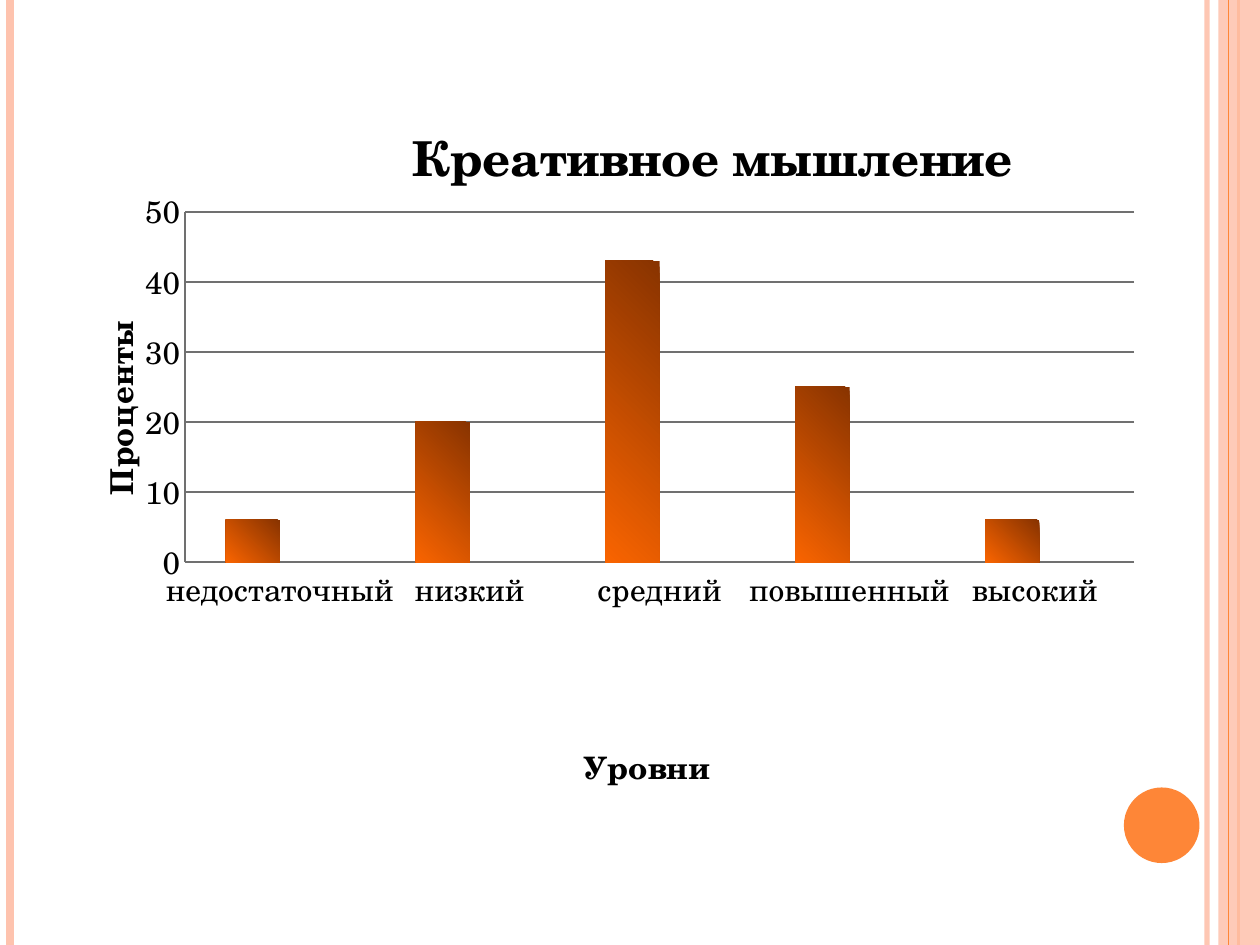
"""Build a slide with a column chart of creative thinking levels."""
from lxml.etree import SubElement
from pptx import Presentation
from pptx.chart.data import CategoryChartData
from pptx.dml.color import RGBColor
from pptx.enum.chart import XL_CHART_TYPE, XL_TICK_MARK
from pptx.enum.shapes import MSO_CONNECTOR, MSO_SHAPE
from pptx.oxml import parse_xml
from pptx.oxml.ns import nsdecls, qn
from pptx.util import Inches, Pt

THEME = {
    "font": "TeX Gyre Schola", "text": "000000", "grid": "707070",
    "orange": "FE8637", "pink": "FEC3AE", "blue": "7598D9",
    "bar_light": "F96400", "bar_dark": "883300",
    "title_size": 28, "label_size": 18,
}


def set_font(font, size, bold):
    formats = {"name": THEME["font"], "size": Pt(size), "bold": bold}
    for name, value in formats.items():
        setattr(font, name, value)
    font.color.rgb = RGBColor.from_string(THEME["text"])


def set_layout(anchor, **values):
    for old in anchor.getparent().findall(qn("c:layout")):
        old.getparent().remove(old)
    layout = parse_xml(f"<c:layout {nsdecls('c')}><c:manualLayout/></c:layout>")
    for name, value in values.items():
        SubElement(layout[0], qn(f"c:{name}")).set("val", str(value))
    return layout


deck = Presentation()
deck.slide_width, deck.slide_height = Inches(10), Inches(7.5)
page = deck.slides.add_slide(deck.slide_layouts[6])

decorations = [
    ("line", 9.58, 3, "pink", 93),
    ("line", 0.08, 4.5, "pink", 100),
    ("line", 9.83, 1.5, "orange", 100),
    (MSO_SHAPE.RECTANGLE, (9.67, 0, 0.33, 7.5), 0, "pink", 87),
    ("line", 9.75, 0.75, "orange", 100),
    (MSO_SHAPE.OVAL, (8.92, 6.25, 0.6, 0.6), 0, "orange", 100),
]
for kind, place, weight, color, opacity in decorations:
    if kind == "line":
        shape = page.shapes.add_connector(
            MSO_CONNECTOR.STRAIGHT, Inches(place), 0, Inches(place), deck.slide_height)
        shape.line.width = Pt(weight)
        fill = shape.line.fill
        SubElement(shape._element.spPr, qn("a:effectLst"))
    else:
        shape = page.shapes.add_shape(kind, *map(Inches, place))
        shape.shadow.inherit = False
        shape.line.fill.background()
        fill = shape.fill
    fill.solid()
    fill.fore_color.rgb = RGBColor.from_string(THEME[color])
    if opacity < 100:
        for paint in shape._element.spPr.iter(qn("a:srgbClr")):
            SubElement(paint, qn("a:alpha")).set("val", str(opacity * 1000))

data = CategoryChartData()
data.categories = ["недостаточный", "низкий", "средний", "повышенный", "высокий "]
data.add_series("Series 1", [6, 20, 43, 25, 6])
data.add_series("Столбец2", [None] * 5)
chart = page.shapes.add_chart(
    XL_CHART_TYPE.COLUMN_CLUSTERED,
    *map(Inches, (0.43, 0.68, 8.66, 5.67)), data).chart
chart.has_legend = False
set_font(chart.font, THEME["label_size"], False)

titles = [
    (chart, "Креативное мышление", "title_size", 0.32, 0.03),
    (chart.category_axis, "Уровни", "label_size", 0.48, 0.925),
    (chart.value_axis, "Проценты ", "label_size", 0.03, 0.32),
]
for owner, words, size, left, top in titles:
    owner.has_title = True
    title = owner.chart_title if owner is chart else owner.axis_title
    title.text_frame.text = words
    set_font(title.text_frame.paragraphs[0].runs[0].font, THEME[size], True)
    anchor = title._element.find(qn("c:tx"))
    anchor.addnext(set_layout(anchor, xMode="edge", yMode="edge", x=left, y=top))

value_axis = chart.value_axis
value_axis.minimum_scale, value_axis.maximum_scale = 0, 50
value_axis.major_unit = 10
value_axis.has_major_gridlines = True
for axis in (chart.category_axis, value_axis):
    axis.major_tick_mark = axis.minor_tick_mark = XL_TICK_MARK.NONE
    set_font(axis.tick_labels.font, THEME["label_size"], False)
for part in (chart.category_axis, value_axis, value_axis.major_gridlines):
    part.format.line.color.rgb = RGBColor.from_string(THEME["grid"])
    part.format.line.width = Pt(1)

plot = chart.plots[0]
plot.vary_by_categories = False
plot.gap_width, plot.overlap = 150, 0
bars, empty_series = plot.series
empty_series.format.fill.solid()
empty_series.format.fill.fore_color.rgb = RGBColor.from_string(THEME["blue"])
bars.format.fill.background()
properties = bars._element.find(qn("c:spPr"))
properties.replace(properties.find(qn("a:noFill")), parse_xml(
    f'<a:gradFill {nsdecls("a")} rotWithShape="1"><a:gsLst>'
    f'<a:gs pos="0"><a:srgbClr val="{THEME["bar_light"]}"/></a:gs>'
    f'<a:gs pos="100000"><a:srgbClr val="{THEME["bar_dark"]}"/></a:gs></a:gsLst>'
    '<a:path path="circle"><a:fillToRect t="100000" r="100000"/></a:path></a:gradFill>'))

first_plot = plot._element
plot_area = first_plot.getparent()
plot_area.insert(0, set_layout(
    first_plot, layoutTarget="inner", xMode="edge", yMode="edge",
    x=0.12, y=0.18, w=0.87, h=0.5))

deck.save("out.pptx")
